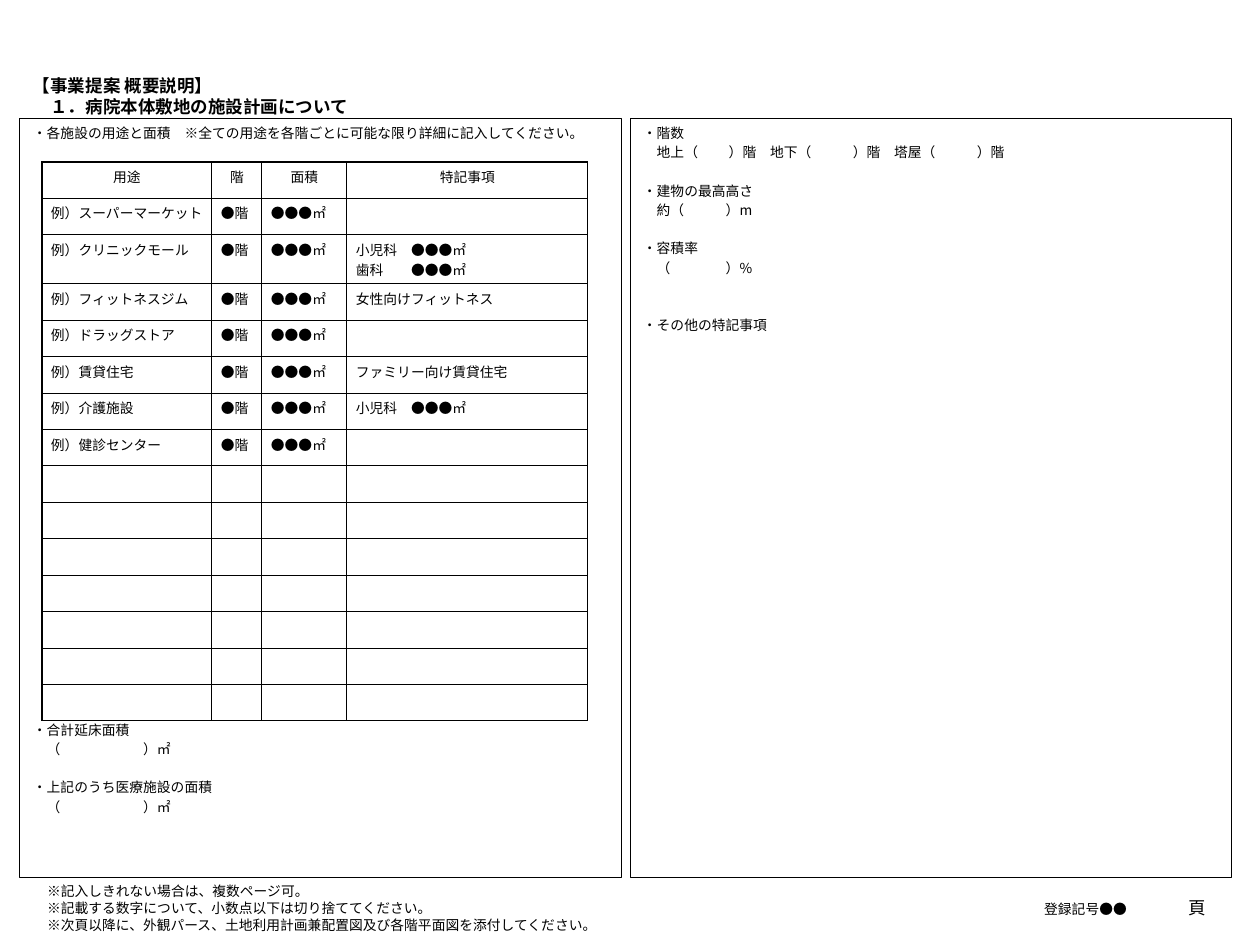
from lxml import etree
from pptx import Presentation
from pptx.dml.color import RGBColor
from pptx.enum.shapes import MSO_SHAPE
from pptx.enum.text import MSO_ANCHOR, PP_ALIGN
from pptx.oxml.ns import qn
from pptx.util import Emu, Pt

RECTANGLE = MSO_SHAPE.RECTANGLE
TOP, MIDDLE = MSO_ANCHOR.TOP, MSO_ANCHOR.MIDDLE
LEFT, CENTER, RIGHT = PP_ALIGN.LEFT, PP_ALIGN.CENTER, PP_ALIGN.RIGHT

BLACK = RGBColor(0, 0, 0)
FONT = "Noto Sans CJK JP"
BODY_SIZE, HEADING_SIZE = 11, 14
BODY_PITCH, HEADING_PITCH, NOTE_PITCH = 15.4, 16.8, 13.2
EMU_PER_PX = 914400 // 90

# Each line is (text, number of line heights left free above it).
TITLE = [("【事業提案 概要説明】", 0), ("　１．病院本体敷地の施設計画について", 0)]
USES_PANEL = [
    ("・各施設の用途と面積　※全ての用途を各階ごとに可能な限り詳細に記入してください。", 0),
    ("・合計延床面積", 30),
    ("　（　　　　　　）㎡", 0),
    ("・上記のうち医療施設の面積", 1),
    ("　（　　　　　　）㎡", 0),
]
BUILDING_PANEL = [
    ("・階数", 0),
    ("　地上（　 　）階　地下（　　　）階　塔屋（　　　）階", 0),
    ("・建物の最高高さ", 1),
    ("　約（　　　）m", 0),
    ("・容積率", 1),
    ("　（　　　　）%", 0),
    ("・その他の特記事項", 2),
]
NOTES = [
    ("※記入しきれない場合は、複数ページ可。", 0),
    ("※記載する数字について、小数点以下は切り捨ててください。", 0),
    ("※次頁以降に、外観パース、土地利用計画兼配置図及び各階平面図を添付してください。", 0),
]

HEADERS = ["用途", "階", "面積", "特記事項"]
FLOOR, AREA = "●階", "●●●㎡"
FACILITIES = [
    ("スーパーマーケット", ""),
    ("クリニックモール", "小児科　●●●㎡\n歯科　　●●●㎡"),
    ("フィットネスジム", "女性向けフィットネス"),
    ("ドラッグストア", ""),
    ("賃貸住宅", "ファミリー向け賃貸住宅"),
    ("介護施設", "小児科　●●●㎡"),
    ("健診センター", ""),
]
EMPTY_ROWS = 7
COLUMN_WIDTHS = [170, 50, 85, 241]
TABLE_LEFT, TABLE_TOP, TABLE_HEIGHT = 42, 162, 559
TWO_LINE_ROW_HEIGHT = 49
PANEL_TOP, PANEL_WIDTH, PANEL_HEIGHT = 118, 602, 759


def px(value):
    return Emu(value * EMU_PER_PX)


def style_run(run, size, bold=False):
    for name, value in {"name": FONT, "size": Pt(size), "bold": bold}.items():
        setattr(run.font, name, value)
    run.font.color.rgb = BLACK
    etree.SubElement(run._r.get_or_add_rPr(), qn("a:ea"), typeface=FONT)


def write_lines(shape, lines, pitch, size=BODY_SIZE, bold=False,
                align=LEFT, anchor=MIDDLE, inset_top=6):
    frame = shape.text_frame
    frame_format = {
        "word_wrap": True, "vertical_anchor": anchor,
        "margin_left": px(13), "margin_right": px(13),
        "margin_top": px(inset_top), "margin_bottom": px(6),
    }
    for name, value in frame_format.items():
        setattr(frame, name, value)
    for index, (text, free_lines) in enumerate(lines):
        paragraph = frame.add_paragraph() if index else frame.paragraphs[0]
        paragraph_format = {
            "alignment": align, "line_spacing": Pt(pitch),
            "space_before": Pt(free_lines * pitch),
        }
        for name, value in paragraph_format.items():
            setattr(paragraph, name, value)
        run = paragraph.add_run()
        run.text = text
        style_run(run, size, bold)


def add_panel(slide, left, lines):
    panel = slide.shapes.add_shape(
        RECTANGLE, px(left), px(PANEL_TOP), px(PANEL_WIDTH), px(PANEL_HEIGHT))
    panel.shadow.inherit = False
    panel.fill.background()
    panel.line.color.rgb = BLACK
    panel.line.width = Pt(0.75)
    write_lines(panel, lines, BODY_PITCH, anchor=TOP, inset_top=4)


def add_text(slide, box, lines, pitch, **options):
    text_box = slide.shapes.add_textbox(*map(px, box))
    write_lines(text_box, lines, pitch, **options)


def add_borders(cell):
    properties = cell._tc.get_or_add_tcPr()
    for index, side in enumerate(("lnL", "lnR", "lnT", "lnB")):
        line = etree.Element(qn(f"a:{side}"), w=str(Pt(1)))
        fill = etree.SubElement(line, qn("a:solidFill"))
        etree.SubElement(fill, qn("a:srgbClr"), val=str(BLACK))
        properties.insert(index, line)


def fill_cell(cell, text, align):
    cell.fill.background()
    add_borders(cell)
    cell.text = text
    for paragraph in cell.text_frame.paragraphs:
        paragraph.alignment = align
        for run in paragraph.runs:
            style_run(run, BODY_SIZE)
        if not paragraph.runs:
            etree.SubElement(paragraph._p, qn("a:endParaRPr"), sz=str(BODY_SIZE * 100))


def set_row_heights(table, rows):
    """Give two-line rows their own height and share the rest equally."""
    two_line = [any("\n" in text for text in row) for row in rows]
    tall_rows = sum(two_line)
    shared = px(TABLE_HEIGHT - tall_rows * TWO_LINE_ROW_HEIGHT)
    single_height = Emu(shared // (len(rows) - tall_rows))
    for table_row, is_tall in zip(table.rows, two_line):
        table_row.height = px(TWO_LINE_ROW_HEIGHT) if is_tall else single_height


def add_facility_table(slide):
    rows = [HEADERS]
    rows += [[f"例）{use}", FLOOR, AREA, remark] for use, remark in FACILITIES]
    rows += [[""] * len(HEADERS)] * EMPTY_ROWS
    table = slide.shapes.add_table(
        len(rows), len(HEADERS), px(TABLE_LEFT), px(TABLE_TOP),
        px(sum(COLUMN_WIDTHS)), px(TABLE_HEIGHT)).table
    table.first_row = table.horz_banding = False
    for column, width in zip(table.columns, COLUMN_WIDTHS):
        column.width = px(width)
    set_row_heights(table, rows)
    for row_index, row in enumerate(rows):
        for column_index, text in enumerate(row):
            fill_cell(table.cell(row_index, column_index), text,
                      LEFT if row_index else CENTER)


def main():
    presentation = Presentation()
    presentation.slide_width, presentation.slide_height = px(1260), px(945)
    slide = presentation.slides.add_slide(presentation.slide_layouts[6])
    add_text(slide, (20, 67, 1205, 71), TITLE, HEADING_PITCH,
             size=HEADING_SIZE, bold=True, anchor=TOP, inset_top=8)
    add_panel(slide, 20, USES_PANEL)
    add_panel(slide, 630, BUILDING_PANEL)
    add_text(slide, (1148, 883, 71, 50), [("頁", 0)], HEADING_PITCH,
             size=HEADING_SIZE, align=RIGHT)
    add_text(slide, (1027, 883, 113, 50), [("登録記号●●", 0)], BODY_PITCH, align=RIGHT)
    add_facility_table(slide)
    add_text(slide, (34, 883, 624, 50), NOTES, NOTE_PITCH)
    presentation.save("out.pptx")


if __name__ == "__main__":
    main()
